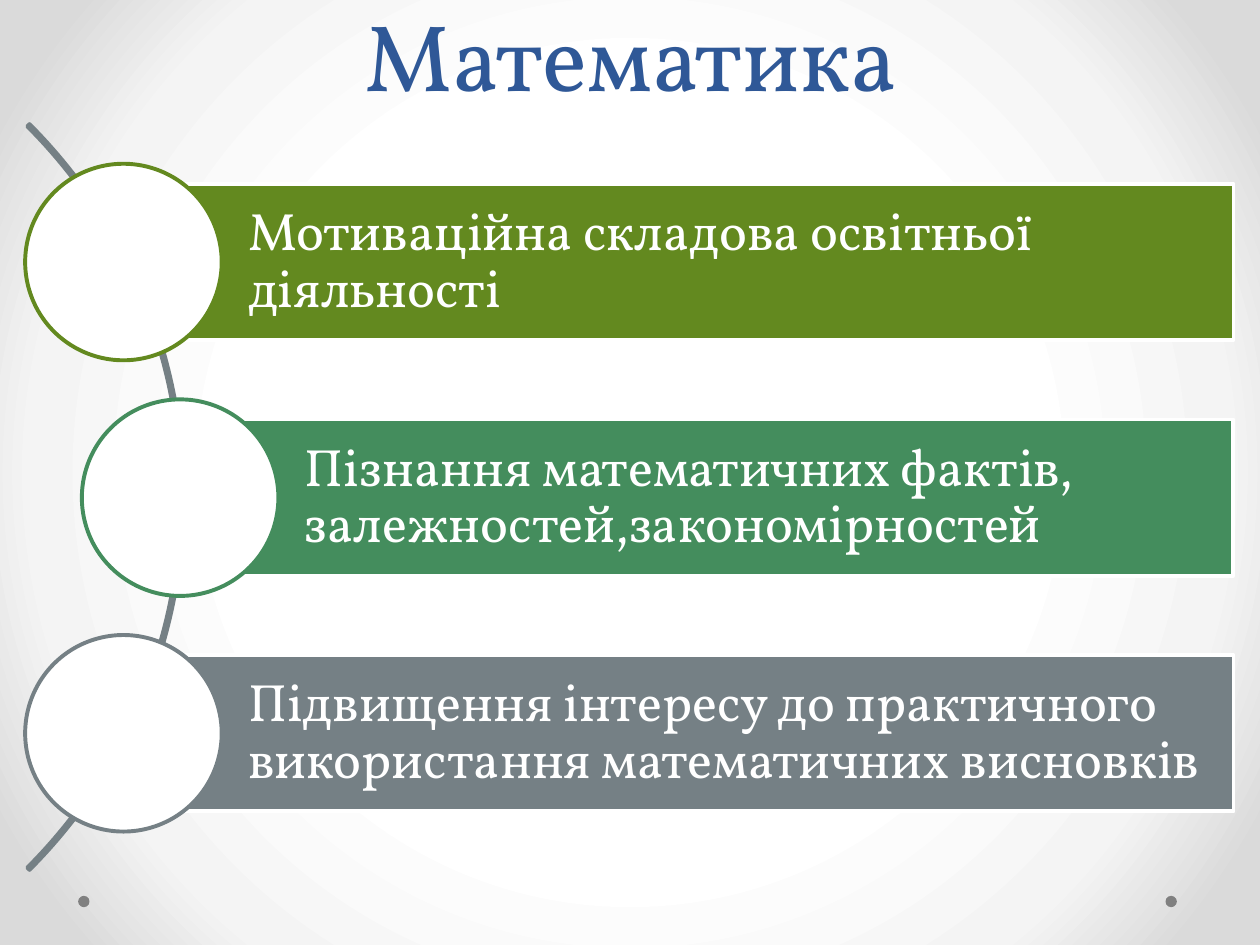
"""Build the mathematics slide: a title and three labelled bars along an arc."""
from dataclasses import dataclass

from pptx import Presentation
from pptx import util as u
from pptx.dml.color import RGBColor
from pptx.enum import shapes, text
from pptx.oxml import parse_xml
from pptx.oxml.ns import nsdecls

COLORS = {
    "white": "FFFFFF",
    "pale": "F4F4F4",
    "silver": "DADADA",
    "dot": "808080",
    "title": "2F5897",
    "olive": "63891F",
    "green": "448D5D",
    "slate": "758085",
}
BACKGROUND_STOPS = {50: "white", 76: "pale", 92: "silver"}
FONT = "Vollkorn"
BAR_RIGHT, BAR_TOP, BAR_HEIGHT, BAR_PITCH = 9.79, 1.46, 1.24, 1.87
CIRCLE_SIZE, CIRCLE_SHIFT = 1.56, 0.78
DOT_LEFTS, DOT_TOP, DOT_SIZE = (0.62, 9.25), 7.11, 0.09
SHAPE = shapes.MSO_SHAPE


@dataclass
class Bar:
    """One labelled bar with its circle."""
    label: str
    color: str
    left: float


BARS = [
    Bar("Мотиваційна складова освітньої діяльності", "olive", 0.98),
    Bar("Пізнання математичних фактів, залежностей,закономірностей", "green", 1.43),
    Bar("Підвищення інтересу до практичного використання математичних висновків",
        "slate", 0.98),
]


def rgb(name: str) -> RGBColor:
    """Return the named colour."""
    return RGBColor.from_string(COLORS[name])


def set_values(target, values: dict) -> None:
    """Set each attribute of the target from a dict."""
    for name, value in values.items():
        setattr(target, name, value)


def add_shape(slide, kind, box: tuple, fill: str = "", line: str = ""):
    """Add a preset shape with an optional fill and outline."""
    shape = slide.shapes.add_shape(kind, *map(u.Inches, box))
    shape.shadow.inherit = False
    if fill:
        shape.fill.solid()
        shape.fill.fore_color.rgb = rgb(fill)
    else:
        shape.fill.background()
    if line:
        shape.line.color.rgb = rgb(line)
        shape.line.width = u.Pt(2.25)
    else:
        shape.line.fill.background()
    return shape


def write_text(shape, content: str, size: int, color: str,
               frame_format: dict, paragraph_format: dict) -> None:
    """Write one formatted paragraph into a shape."""
    frame = shape.text_frame
    frame.text = content
    set_values(frame, {"word_wrap": True, "auto_size": text.MSO_AUTO_SIZE.NONE,
                       **frame_format})
    paragraph = frame.paragraphs[0]
    set_values(paragraph, paragraph_format)
    font = paragraph.runs[0].font
    set_values(font, {"name": FONT, "size": u.Pt(size)})
    font.color.rgb = rgb(color)


def add_background(slide) -> None:
    """Give the slide a radial gradient background."""
    stops = "".join(
        f'<a:gs pos="{position * 1000}"><a:srgbClr val="{COLORS[color]}"/></a:gs>'
        for position, color in BACKGROUND_STOPS.items())
    slide.element.cSld.insert(0, parse_xml(
        f'<p:bg {nsdecls("p", "a")}><p:bgPr><a:gradFill rotWithShape="1">'
        f'<a:gsLst>{stops}</a:gsLst><a:path path="circle">'
        '<a:fillToRect l="50000" t="50000" r="50000" b="50000"/></a:path>'
        '</a:gradFill><a:effectLst/></p:bgPr></p:bg>'))


def add_title(slide) -> None:
    """Place and format the title."""
    title = slide.shapes.title
    set_values(title, {"left": u.Inches(0.51), "top": u.Inches(0.02),
                       "width": u.Inches(9), "height": u.Inches(0.91)})
    write_text(title, "Математика", 54, "title",
               {"vertical_anchor": text.MSO_ANCHOR.BOTTOM},
               {"alignment": text.PP_ALIGN.CENTER, "line_spacing": u.Pt(58)})


def add_arc(slide) -> None:
    """Add the thin arc behind the circles."""
    arc = add_shape(slide, SHAPE.BLOCK_ARC, (-6.91, -0.24, 8.37, 8.37), line="slate")
    for index, value in enumerate((189, 27, 0.003)):
        arc.adjustments[index] = value


def add_bar(slide, bar: Bar, top: float) -> None:
    """Add a bar with its label and the circle over its left end."""
    box = (bar.left, top, BAR_RIGHT - bar.left, BAR_HEIGHT)
    rectangle = add_shape(slide, SHAPE.RECTANGLE, box, bar.color, "white")
    margin = u.Inches(0.08)
    write_text(rectangle, bar.label, 30, "white",
               {"vertical_anchor": text.MSO_ANCHOR.MIDDLE,
                "margin_left": u.Inches(0.99), "margin_right": margin,
                "margin_top": margin, "margin_bottom": margin},
               {"alignment": text.PP_ALIGN.LEFT, "line_spacing": 0.9})
    circle_top = top + (BAR_HEIGHT - CIRCLE_SIZE) / 2
    add_shape(slide, SHAPE.OVAL,
              (bar.left - CIRCLE_SHIFT, circle_top, CIRCLE_SIZE, CIRCLE_SIZE),
              "white", bar.color)


def main() -> None:
    """Build and save the presentation."""
    presentation = Presentation()
    set_values(presentation, {"slide_width": u.Inches(10),
                              "slide_height": u.Inches(7.5)})
    slide = presentation.slides.add_slide(presentation.slide_layouts[5])
    add_background(slide)
    for left in DOT_LEFTS:
        add_shape(slide, SHAPE.OVAL, (left, DOT_TOP, DOT_SIZE, DOT_SIZE), "dot")
    add_title(slide)
    add_arc(slide)
    for index, bar in enumerate(BARS):
        add_bar(slide, bar, BAR_TOP + index * BAR_PITCH)
    presentation.save("out.pptx")


if __name__ == "__main__":
    main()
